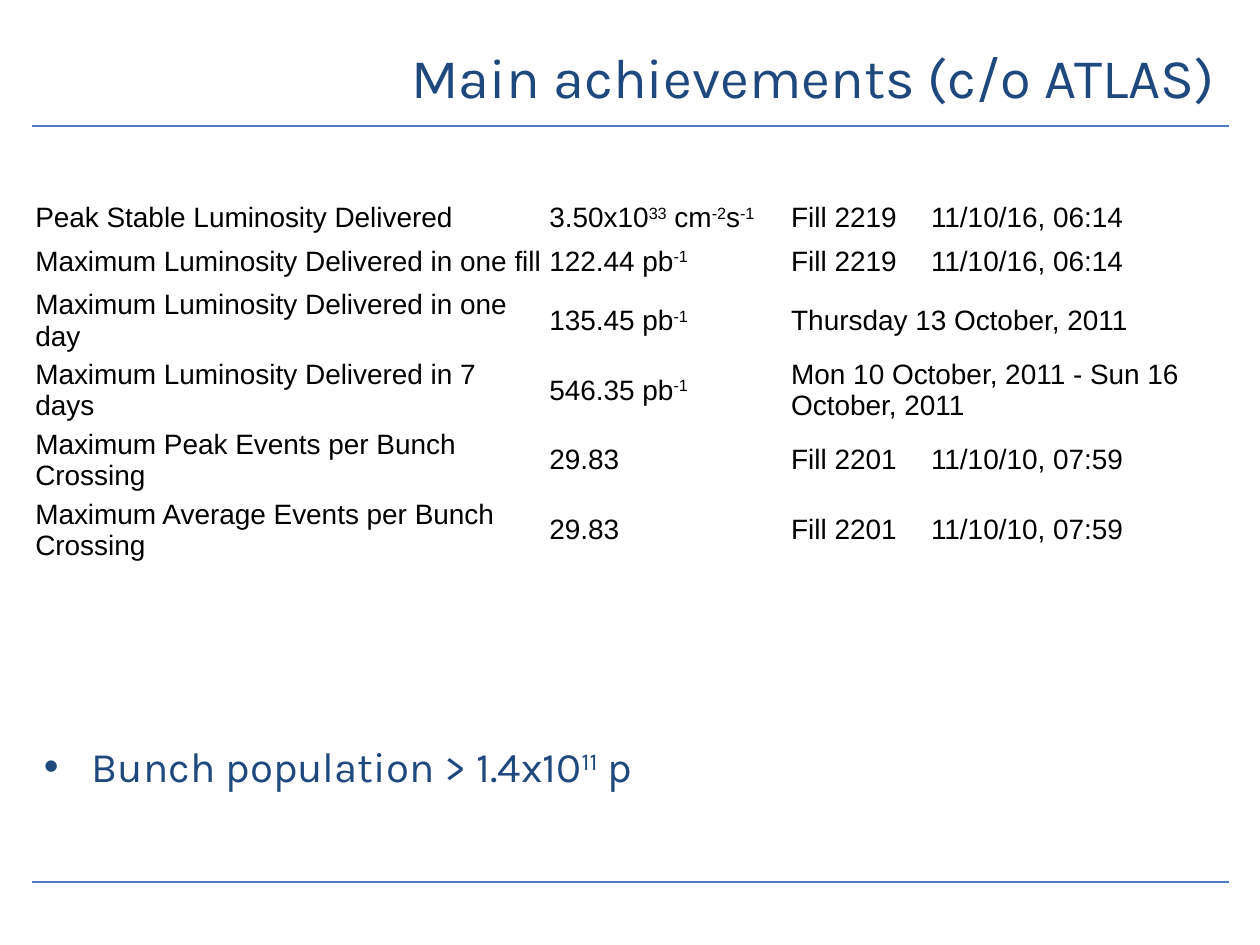
from dataclasses import dataclass

import pptx
import pptx.dml.color
import pptx.enum.shapes
import pptx.enum.text
import pptx.oxml
import pptx.oxml.ns
import pptx.util

Inches = pptx.util.Inches
Enum = pptx.enum.text


@dataclass(frozen=True)
class Theme:
    heading: str = "Karla"
    body: str = "Arial"
    navy: str = "1F497D"
    black: str = "000000"
    rule: str = "4B7EBC"
    title_size: int = 32
    bullet_size: int = 24
    table_size: int = 16
    rule_width: float = 1.5


THEME = Theme()
WIDTH, HEIGHT = 10, 7.5
MARGIN = 0.25
CONTENT = WIDTH - 2 * MARGIN
RULES = (1, 7)
COLUMNS = (4.08, 1.92, 1.11, 2.39)
ROW_HEIGHTS = (0.3, 0.39, 0.39, 0.39, 0.39, 0.48)
TABLE_TOP, TABLE_HEIGHT = 1.58, 3.11

RECORDS = (
    ("Peak Stable Luminosity Delivered", "3.50x10^33^ cm^-2^s^-1",
     "Fill 2219", "11/10/16, 06:14"),
    ("Maximum Luminosity Delivered in one fill", "122.44 pb^-1",
     "Fill 2219", "11/10/16, 06:14"),
    ("Maximum Luminosity Delivered in one day", "135.45 pb^-1",
     "Thursday 13 October, 2011"),
    ("Maximum Luminosity Delivered in 7 days", "546.35 pb^-1",
     "Mon 10 October, 2011 - Sun 16 October, 2011"),
    ("Maximum Peak Events per Bunch Crossing", "29.83",
     "Fill 2201", "11/10/10, 07:59"),
    ("Maximum Average Events per Bunch Crossing", "29.83",
     "Fill 2201", "11/10/10, 07:59"),
)


def set_all(target, **values):
    for name, value in values.items():
        setattr(target, name, value)


def write(p, text, font, size, color):
    for i, part in enumerate(text.split("^")):
        if not part:
            continue
        r = p.add_run()
        r.text = part
        set_all(r.font, name=font, size=pptx.util.Pt(size), bold=False)
        r.font.color.rgb = pptx.dml.color.RGBColor.from_string(color)
        if i % 2:
            r.font._element.set("baseline", "30000")


def add_rule(s, y):
    line = s.shapes.add_connector(
        pptx.enum.shapes.MSO_CONNECTOR.STRAIGHT,
        Inches(MARGIN), Inches(y), Inches(WIDTH - MARGIN), Inches(y))
    line.line.width = pptx.util.Pt(THEME.rule_width)
    line.line.color.rgb = pptx.dml.color.RGBColor.from_string(THEME.rule)
    line._element.spPr.append(pptx.oxml.parse_xml(
        f'<a:effectLst {pptx.oxml.ns.nsdecls("a")}/>'))


def add_title(s, text):
    sp = s.shapes.title
    set_all(sp, left=Inches(1.75), top=Inches(0.17),
            width=Inches(8), height=Inches(0.87))
    tf = sp.text_frame
    set_all(tf, word_wrap=True, auto_size=Enum.MSO_AUTO_SIZE.NONE,
            vertical_anchor=Enum.MSO_ANCHOR.MIDDLE)
    p = tf.paragraphs[0]
    p.alignment = Enum.PP_ALIGN.RIGHT
    write(p, text, THEME.heading, THEME.title_size, THEME.navy)


def add_bullet(s, text, y):
    sp = s.shapes.add_textbox(
        Inches(MARGIN), Inches(y), Inches(CONTENT), Inches(0.58))
    tf = sp.text_frame
    tf.word_wrap = True
    p = tf.paragraphs[0]
    pPr = p._p.get_or_add_pPr()
    pPr.set("marL", str(Inches(0.38)))
    pPr.set("indent", str(Inches(-0.38)))
    ns = pptx.oxml.ns.nsdecls("a")
    for xml in (f'<a:buFont {ns} typeface="Arial"/>',
                f'<a:buChar {ns} char="•"/>'):
        pPr.append(pptx.oxml.parse_xml(xml))
    write(p, text, THEME.heading, THEME.bullet_size, THEME.navy)


def add_records(s, records):
    frame = s.shapes.add_table(
        len(records), len(COLUMNS), Inches(MARGIN), Inches(TABLE_TOP),
        Inches(CONTENT), Inches(TABLE_HEIGHT))
    table = frame.table
    set_all(table, first_row=False, horz_banding=False)
    for column, width in zip(table.columns, COLUMNS):
        column.width = Inches(width)
    for row, height in zip(table.rows, ROW_HEIGHTS):
        row.height = Inches(height)
    frame.height = Inches(TABLE_HEIGHT)
    for i, record in enumerate(records):
        if len(record) < len(COLUMNS):
            table.cell(i, len(record) - 1).merge(
                table.cell(i, len(COLUMNS) - 1))
        for cell in table.rows[i].cells:
            cell.fill.background()
            set_all(cell, vertical_anchor=Enum.MSO_ANCHOR.MIDDLE,
                    margin_left=Inches(0.03), margin_right=Inches(0.03),
                    margin_top=Inches(0.01), margin_bottom=Inches(0.01))
        for j, text in enumerate(record):
            write(table.cell(i, j).text_frame.paragraphs[0], text,
                  THEME.body, THEME.table_size, THEME.black)


def main():
    prs = pptx.Presentation()
    set_all(prs, slide_width=Inches(WIDTH), slide_height=Inches(HEIGHT))
    s = prs.slides.add_slide(prs.slide_layouts[5])
    for y in RULES:
        add_rule(s, y)
    add_title(s, "Main achievements (c/o ATLAS)")
    add_bullet(s, "Bunch population > 1.4x10^11^ p", 5.83)
    add_records(s, RECORDS)
    prs.save("out.pptx")


if __name__ == "__main__":
    main()
